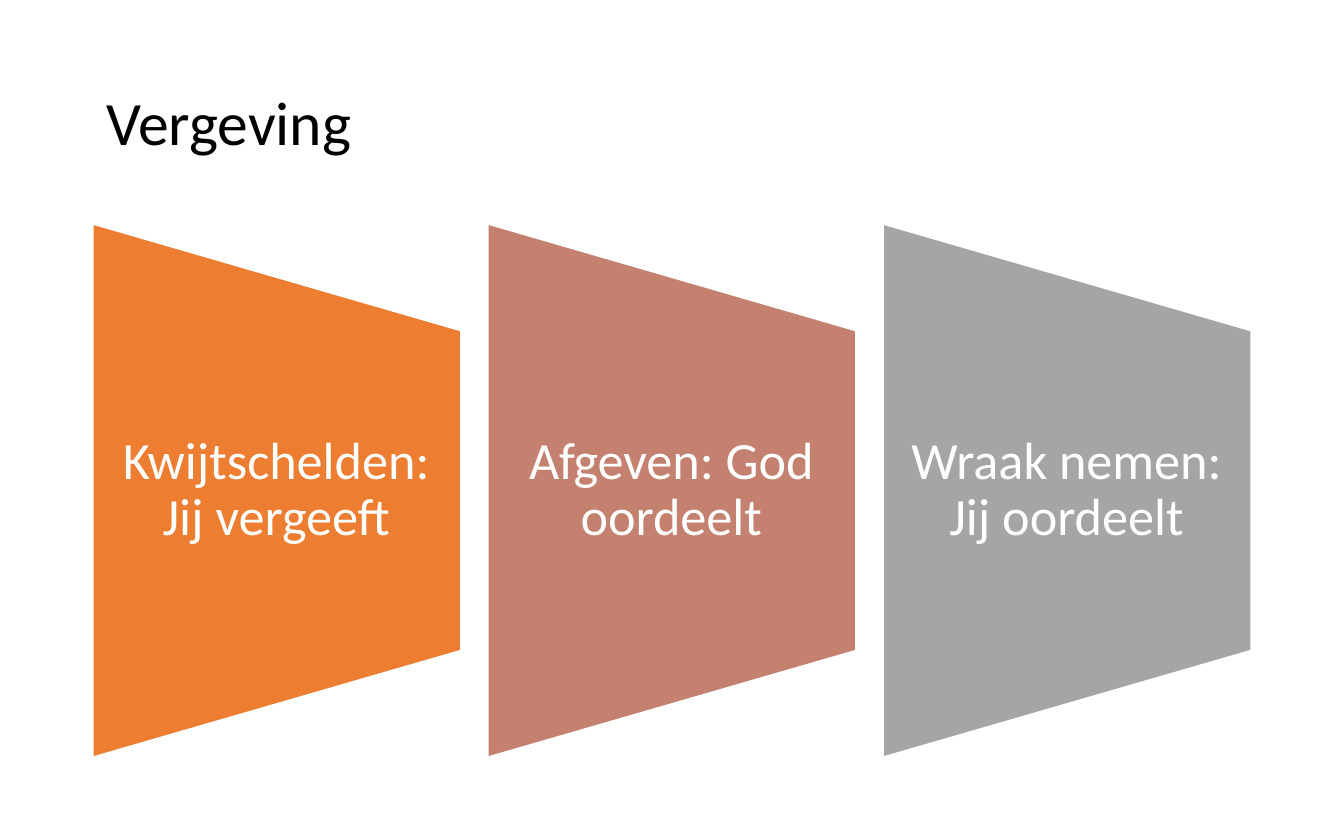
from dataclasses import dataclass

from pptx import Presentation
from pptx.dml.color import RGBColor
from pptx.enum.shapes import MSO_SHAPE
from pptx.enum.text import MSO_ANCHOR, PP_ALIGN
from pptx.util import Inches, Pt

TRAPEZOID = MSO_SHAPE.FLOWCHART_MANUAL_OPERATION
MIDDLE = MSO_ANCHOR.MIDDLE
LEFT, CENTER = PP_ALIGN.LEFT, PP_ALIGN.CENTER

COLORS = {
    "black": "000000",
    "white": "FFFFFF",
    "orange": "ED7D31",
    "rose": "C48170",
    "gray": "A5A5A5",
}
FONT = "Calibri"

PANEL_LEFT, PANEL_STEP = 0.69, 2.94
PANEL_WIDTH, PANEL_HEIGHT = 2.74, 3.97
PANEL_MIDDLE = 3.65
TEXT_HEIGHT = 2.38


@dataclass
class Panel:
    text: str
    color: str


PANELS = [
    Panel("Kwijtschelden: Jij vergeeft", "orange"),
    Panel("Afgeven: God oordeelt", "rose"),
    Panel("Wraak nemen: Jij oordeelt", "gray"),
]


def rgb(name: str) -> RGBColor:
    return RGBColor.from_string(COLORS[name])


def set_text(sp, text: str, *, size: float, color: str, align=LEFT,
             margins=(0.1, 0.05, 0.1, 0.05)) -> None:
    """Write one paragraph; margins are left, top, right, bottom in inches."""
    tf = sp.text_frame
    tf.word_wrap = True
    tf.vertical_anchor = MIDDLE
    tf.margin_left, tf.margin_top, tf.margin_right, tf.margin_bottom = map(Inches, margins)
    p = tf.paragraphs[0]
    p.alignment = align
    p.line_spacing = 0.9
    r = p.add_run()
    r.text = text
    r.font.name = FONT
    r.font.size = Pt(size)
    r.font.color.rgb = rgb(color)


def add_panel(slide, panel: Panel, left: float) -> None:
    """Draw a trapezoid turned a quarter left, with upright text over it."""
    center = left + PANEL_WIDTH / 2
    sp = slide.shapes.add_shape(
        TRAPEZOID,
        Inches(center - PANEL_HEIGHT / 2), Inches(PANEL_MIDDLE - PANEL_WIDTH / 2),
        Inches(PANEL_HEIGHT), Inches(PANEL_WIDTH))
    sp.rotation = 270
    sp.shadow.inherit = False
    sp.fill.solid()
    sp.fill.fore_color.rgb = rgb(panel.color)
    sp.line.color.rgb = rgb("white")
    sp.line.width = Pt(1)

    box = slide.shapes.add_textbox(
        Inches(left), Inches(PANEL_MIDDLE - TEXT_HEIGHT / 2),
        Inches(PANEL_WIDTH), Inches(TEXT_HEIGHT))
    set_text(box, panel.text, size=28, color="white", align=CENTER,
             margins=(0.19, 0, 0.2, 0))


def main() -> None:
    prs = Presentation()
    prs.slide_width, prs.slide_height = Inches(10), Inches(6.25)
    slide = prs.slides.add_slide(prs.slide_layouts[5])

    title = slide.shapes.title
    title.left, title.top = Inches(PANEL_LEFT), Inches(0.33)
    title.width, title.height = Inches(8.62), Inches(1.21)
    set_text(title, "Vergeving", size=33, color="black")

    for i, panel in enumerate(PANELS):
        add_panel(slide, panel, PANEL_LEFT + i * PANEL_STEP)

    prs.save("out.pptx")


if __name__ == "__main__":
    main()
